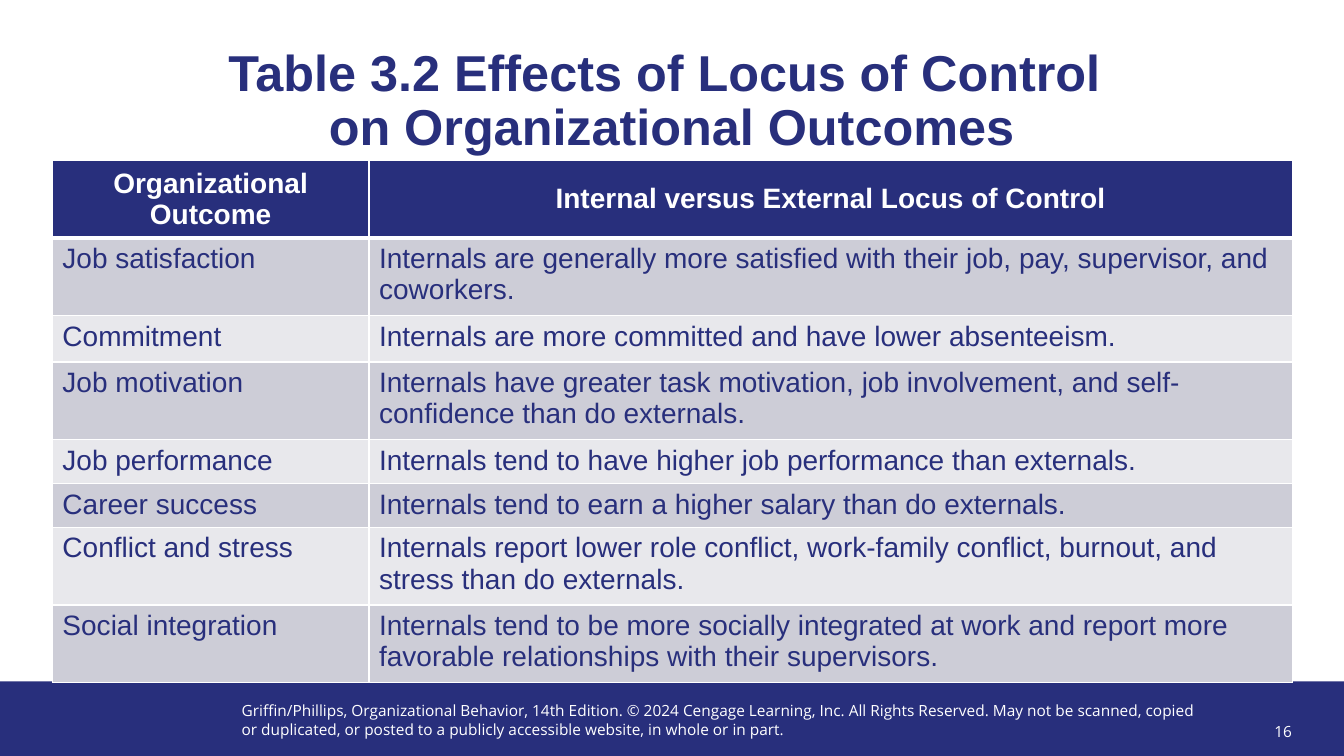
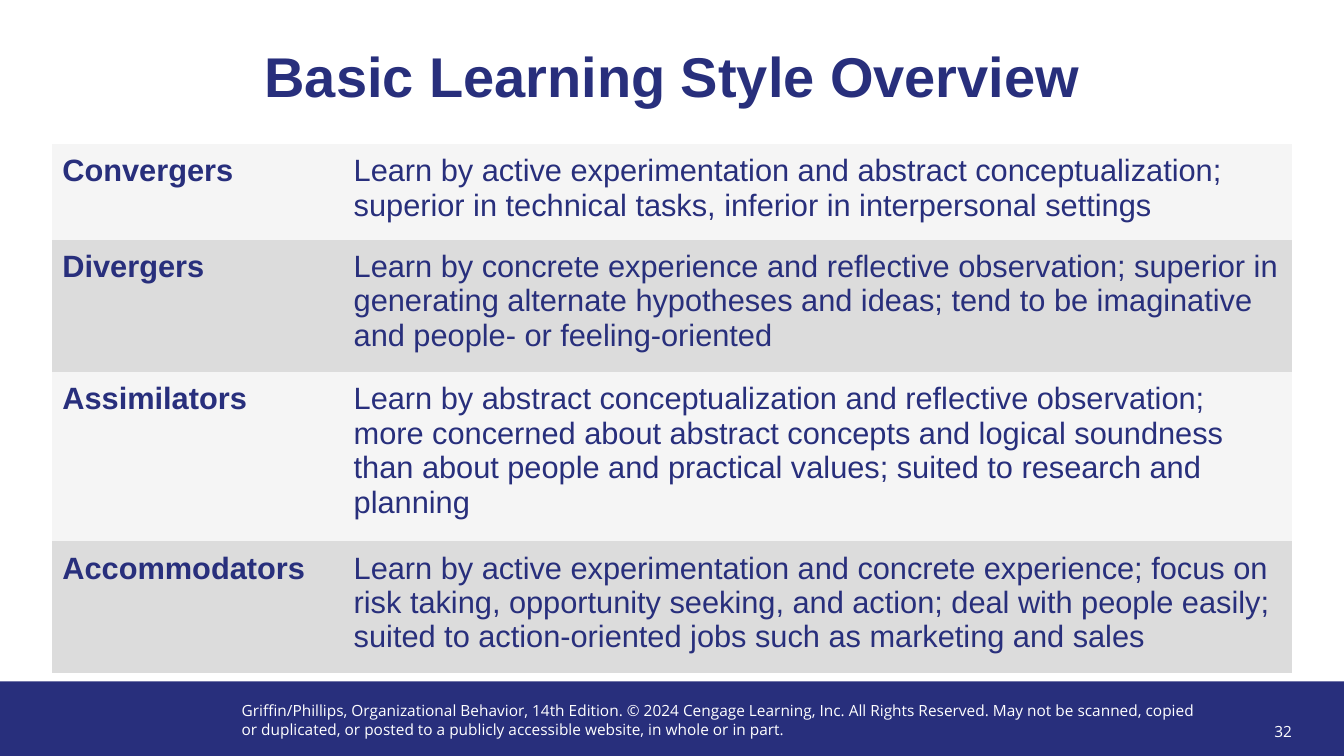
import copy

import pptx
import pptx.dml.color
import pptx.enum.shapes
import pptx.enum.text
import pptx.oxml
import pptx.oxml.ns
import pptx.util
from pptx.util import Cm

ALIGN = pptx.enum.text.PP_ALIGN
ANCHOR = pptx.enum.text.MSO_ANCHOR
NAVY = "282F7C"
WHITE = "FFFFFF"
MARGIN = Cm(1.32)
NO_STYLE_NO_GRID = "{2D5ABB26-0587-4C30-8999-92F81FD0307C}"
COPYRIGHT = (
    "Griffin/Phillips, Organizational Behavior, 14th Edition. © 2024 Cengage Learning, Inc. "
    "All Rights Reserved. May not be scanned, copied or duplicated, or posted to a publicly "
    "accessible website, in whole or in part."
)


def color(value):
    return pptx.dml.color.RGBColor.from_string(value)


def write(frame, text, size, font="Arial", fill=NAVY, bold=False,
          align=ALIGN.LEFT, anchor=ANCHOR.TOP, line_spacing=None):
    frame.word_wrap = True
    frame.vertical_anchor = anchor
    paragraph = frame.paragraphs[0]
    paragraph.text = text
    paragraph.alignment = align
    paragraph.line_spacing = line_spacing
    for run in paragraph.runs:
        run.font.size = pptx.util.Pt(size)
        run.font.name = font
        run.font.bold = bold
        run.font.color.rgb = color(fill)
    for line_break in paragraph._p.findall(pptx.oxml.ns.qn("a:br")):
        line_break.insert(0, copy.deepcopy(paragraph.runs[0]._r.rPr))


pages = [
    {
        "number": 16,
        "title": "Table 3.2 Effects of Locus of Control \von Organizational Outcomes",
        "title_size": 36,
        "title_top": 1.07,
        "title_height": 2.9,
        "table_top": 4.04,
        "columns": [7.98, 23.27],
        "row_heights": [1.85, 1.85, 1.17, 1.85, 1.07, 1.04, 1.85, 1.85],
        "bands": ["CDCDD7", "E8E8EC"],
        "size": 20,
        "margin": 0.13,
        "has_header": True,
        "has_grid": True,
        "bold_labels": False,
        "rows": [
            ("Organizational Outcome", "Internal versus External Locus of Control"),
            ("Job satisfaction", "Internals are generally more satisfied with their job, pay, "
             "supervisor, and coworkers."),
            ("Commitment", "Internals are more committed and have lower absenteeism."),
            ("Job motivation", "Internals have greater task motivation, job involvement, "
             "and self-confidence than do externals."),
            ("Job performance", "Internals tend to have higher job performance than externals."),
            ("Career success", "Internals tend to earn a higher salary than do externals."),
            ("Conflict and stress", "Internals report lower role conflict, work-family conflict, "
             "burnout, and stress than do externals."),
            ("Social integration", "Internals tend to be more socially integrated at work and "
             "report more favorable relationships with their supervisors."),
        ],
    },
    {
        "number": 32,
        "title": "Basic Learning Style Overview",
        "title_size": 40,
        "title_top": 1.12,
        "title_height": 1.93,
        "table_top": 3.63,
        "columns": [7.34, 23.9],
        "row_heights": [2.41, 3.33, 4.27, 3.33],
        "bands": ["F5F5F5", "DCDCDC"],
        "size": 22,
        "margin": 0.25,
        "has_header": False,
        "has_grid": False,
        "bold_labels": True,
        "rows": [
            ("Convergers", "Learn by active experimentation and abstract conceptualization; "
             "superior in technical tasks, inferior in interpersonal settings"),
            ("Divergers", "Learn by concrete experience and reflective observation; superior in "
             "generating alternate hypotheses and ideas; tend to be imaginative and people- or "
             "feeling-oriented"),
            ("Assimilators", "Learn by abstract conceptualization and reflective observation; "
             "more concerned about abstract concepts and logical soundness than about people "
             "and practical values; suited to research and planning"),
            ("Accommodators", "Learn by active experimentation and concrete experience; focus on "
             "risk taking, opportunity seeking, and action; deal with people easily; suited to "
             "action-oriented jobs such as marketing and sales"),
        ],
    },
]

presentation = pptx.Presentation()
presentation.slide_width = Cm(33.87)
presentation.slide_height = Cm(19.05)
title_only = presentation.slide_layouts[5]

for page in pages:
    slide = presentation.slides.add_slide(title_only)

    band = slide.shapes.add_shape(pptx.enum.shapes.MSO_SHAPE.RECTANGLE,
                                  0, Cm(17.17), presentation.slide_width, Cm(1.88))
    band.shadow.inherit = False
    band.fill.solid()
    band.fill.fore_color.rgb = color(NAVY)
    band.line.fill.background()

    footer = slide.shapes.add_textbox(Cm(5.84), Cm(17.55), Cm(24.89), Cm(1.19))
    write(footer.text_frame, COPYRIGHT, 11, font="Open Sans", fill=WHITE)
    number = slide.shapes.add_textbox(Cm(30.78), Cm(17.91), Cm(2.03), Cm(1.02))
    write(number.text_frame, str(page["number"]), 11, font="Open Sans", fill=WHITE,
          align=ALIGN.RIGHT, anchor=ANCHOR.MIDDLE)

    title = slide.shapes.title
    title.left, title.top = MARGIN, Cm(page["title_top"])
    title.width, title.height = Cm(31.22), Cm(page["title_height"])
    title.text_frame.auto_size = pptx.enum.text.MSO_AUTO_SIZE.NONE
    write(title.text_frame, page["title"], page["title_size"], bold=True,
          align=ALIGN.CENTER, line_spacing=0.9)

    table = slide.shapes.add_table(
        len(page["rows"]), len(page["columns"]), MARGIN, Cm(page["table_top"]),
        Cm(sum(page["columns"])), Cm(sum(page["row_heights"]))).table
    table.first_row = page["has_header"]
    table.horz_banding = False
    table._tbl.tblPr.find(pptx.oxml.ns.qn("a:tableStyleId")).text = NO_STYLE_NO_GRID
    for column, width in zip(table.columns, page["columns"]):
        column.width = Cm(width)

    for row_index, texts in enumerate(page["rows"]):
        table.rows[row_index].height = Cm(page["row_heights"][row_index])
        is_header = page["has_header"] and row_index == 0
        follows_header = page["has_header"] and row_index == 1
        band_index = (row_index - page["has_header"]) % 2
        for column_index, text in enumerate(texts):
            cell = table.cell(row_index, column_index)
            cell.margin_top = cell.margin_bottom = Cm(page["margin"])
            if page["has_grid"]:
                widths = {"L": 1, "R": 1, "T": 3 if follows_header else 1,
                          "B": 3 if is_header else 1}
                for side, width in widths.items():
                    cell._tc.get_or_add_tcPr().append(pptx.oxml.parse_xml(
                        f'<a:ln{side} {pptx.oxml.ns.nsdecls("a")} w="{pptx.util.Pt(width)}">'
                        f'<a:solidFill><a:srgbClr val="{WHITE}"/></a:solidFill></a:ln{side}>'))
            cell.fill.solid()
            cell.fill.fore_color.rgb = color(NAVY if is_header else page["bands"][band_index])
            write(cell.text_frame, text, page["size"],
                  fill=WHITE if is_header else NAVY,
                  bold=is_header or (page["bold_labels"] and column_index == 0),
                  align=ALIGN.CENTER if is_header else ALIGN.LEFT)
            cell.vertical_anchor = ANCHOR.MIDDLE if is_header else ANCHOR.TOP

presentation.save("out.pptx")
